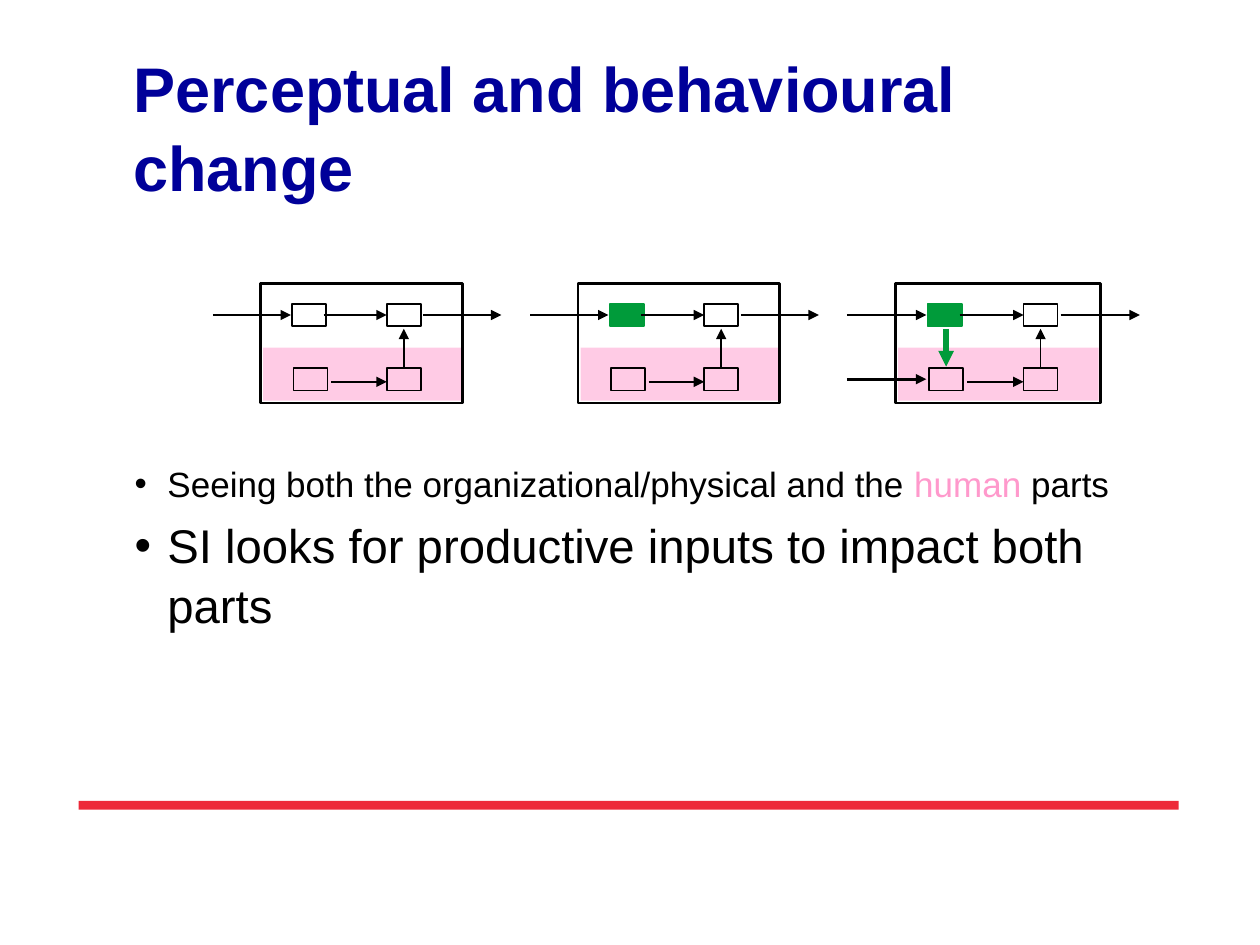
import pptx
import pptx.dml.color
import pptx.enum.shapes
import pptx.enum.text
import pptx.oxml
import pptx.oxml.ns
import pptx.util

Pt = pptx.util.Pt
BLACK, GREEN, PINK, NAVY, RED = "000000", "009B3A", "FF99CC", "000099", "ED2939"
BOX_W, BOX_H = 19.5, 13
UPPER_Y, LOWER_Y = 173.5, 210.2  # tops of the two rows of boxes
FLOW_Y = UPPER_Y + BOX_H / 2


def color(value):
    return pptx.dml.color.RGBColor.from_string(value)


def add_xml(parent, tag, **attrs):
    el = pptx.oxml.parse_xml(f"<a:{tag} {pptx.oxml.ns.nsdecls('a')}/>")
    for name, value in attrs.items():
        el.set(name, str(value))
    parent.append(el)
    return el


def add_rect(s, x, y, w, h, fill=None, line=None, width=1, alpha=None):
    sp = s.shapes.add_shape(pptx.enum.shapes.MSO_SHAPE.RECTANGLE,
                            Pt(x), Pt(y), Pt(w), Pt(h))
    sp.shadow.inherit = False
    if fill:
        sp.fill.solid()
        sp.fill.fore_color.rgb = color(fill)
        if alpha:
            clr = sp._element.spPr.find(".//" + pptx.oxml.ns.qn("a:srgbClr"))
            add_xml(clr, "alpha", val=alpha * 1000)
    else:
        sp.fill.background()
    if line:
        sp.line.color.rgb = color(line)
        sp.line.width = Pt(width)
    else:
        sp.line.fill.background()
    return sp


def add_arrow(s, x1, y1, x2, y2, width=1.0, line=BLACK):
    c = s.shapes.add_connector(pptx.enum.shapes.MSO_CONNECTOR.STRAIGHT,
                               Pt(x1), Pt(y1), Pt(x2), Pt(y2))
    c.line.color.rgb = color(line)
    c.line.width = Pt(width)
    add_xml(c.line._get_or_add_ln(), "tailEnd", type="triangle")
    add_xml(c._element.spPr, "effectLst")
    return c


def add_text(s, x, y, w, h, paragraphs, bullet=False):
    """Each paragraph is (size, bold, [(text, colour), ...])."""
    tf = s.shapes.add_textbox(Pt(x), Pt(y), Pt(w), Pt(h)).text_frame
    frame_format = {"word_wrap": True, "margin_left": 0, "margin_right": 0,
                    "margin_top": 0, "margin_bottom": 0,
                    "vertical_anchor": pptx.enum.text.MSO_ANCHOR.TOP}
    for name, value in frame_format.items():
        setattr(tf, name, value)
    for i, (size, bold, runs) in enumerate(paragraphs):
        p = tf.paragraphs[0] if i == 0 else tf.add_paragraph()
        p.line_spacing = 1.05
        if i:
            p.space_before = Pt(0.2 * size)
        if bullet:
            pPr = p._p.get_or_add_pPr()
            pPr.set("marL", str(Pt(18.7)))
            pPr.set("indent", str(-Pt(18.7)))
            add_xml(pPr, "buFont", typeface="Arial")
            add_xml(pPr, "buChar", char="•")
        for text, value in runs:
            r = p.add_run()
            r.text = text
            for name, setting in {"name": "Arial", "size": Pt(size), "bold": bold}.items():
                setattr(r.font, name, setting)
            r.font.color.rgb = color(value)


def add_system(s, left, scale=1.0, perceived=False, impacted=False):
    """One framed system: organizational row above, human row below."""
    def at(dx):
        return left + dx * scale

    # Human part and frame
    add_rect(s, at(1.4), 198.7, 113 * scale, 30.2, fill=PINK, alpha=50)
    add_rect(s, left, 162, 115.2 * scale, 68.4, line=BLACK, width=1.5)

    # Boxes
    accent = GREEN if perceived else None
    add_rect(s, at(18), UPPER_Y, BOX_W, BOX_H, accent, accent or BLACK)
    upper_right = add_rect(s, at(72), UPPER_Y, BOX_W, BOX_H, line=BLACK)
    add_rect(s, at(18.7), LOWER_Y, BOX_W, BOX_H, line=BLACK)
    lower_right = add_rect(s, at(72), LOWER_Y, BOX_W, BOX_H, line=BLACK)

    # Flows
    add_arrow(s, at(-27.4), FLOW_Y, at(17.3), FLOW_Y, 1.5)
    add_arrow(s, at(36), FLOW_Y, at(72), FLOW_Y).end_connect(upper_right, 1)
    add_arrow(s, at(40.3), 218.2, at(72), 218.2)
    rise_x = at(72) + BOX_W / 2
    add_arrow(s, rise_x, LOWER_Y, rise_x, 187.9).begin_connect(lower_right, 0)
    add_arrow(s, at(92.9), FLOW_Y, at(137.5), FLOW_Y, 1.5)
    if impacted:
        add_arrow(s, at(28.4), 188, at(28.4), 209.5, 3, GREEN)
        add_arrow(s, at(-27.4), 216.7, at(17.3), 216.7, 1.5)


def main():
    prs = pptx.Presentation()
    prs.slide_width, prs.slide_height = Pt(720), Pt(540)
    s = prs.slides.add_slide(prs.slide_layouts[6])

    # Footer rule and title
    add_rect(s, 45, 457.7, 628.6, 5, fill=RED)
    add_text(s, 76.3, 26, 565, 111.6,
             [(36, True, [("Perceptual and behavioural change", NAVY)])])

    # Bullets
    add_text(s, 77, 263, 583, 215, [
        (20, False, [("Seeing both the organizational/physical and the ", BLACK),
                     ("human", PINK), (" parts", BLACK)]),
        (27, False, [("SI looks for productive inputs to impact both parts", BLACK)]),
    ], bullet=True)

    # Three stages of change
    stages = [{}, {"perceived": True},
              {"perceived": True, "impacted": True, "scale": 1.015}]
    for i, stage in enumerate(stages):
        add_system(s, 149 + i * 181.4, **stage)

    prs.save("out.pptx")


if __name__ == "__main__":
    main()
